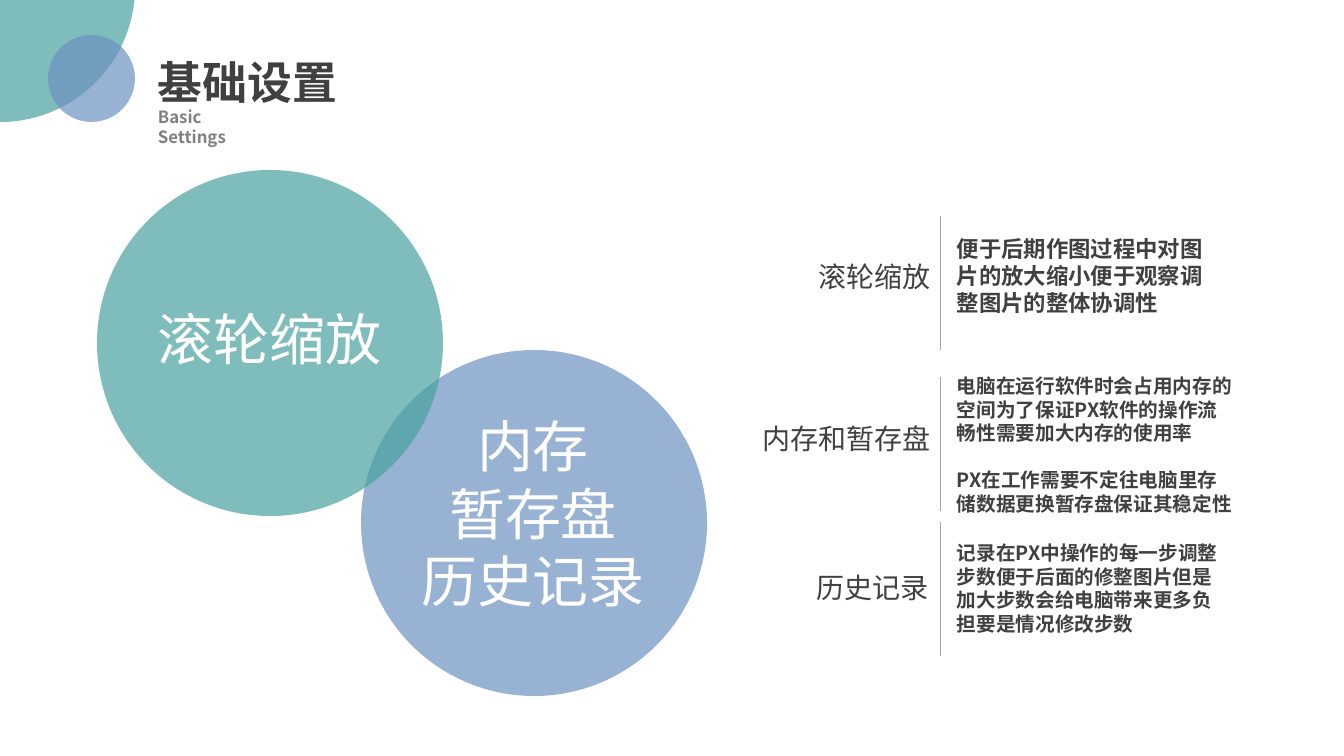
from lxml import etree
from pptx import Presentation
from pptx.dml.color import RGBColor as RGB
from pptx.enum.shapes import MSO_CONNECTOR as CONN, MSO_SHAPE as SHAPE
from pptx.enum.text import PP_ALIGN as AL
from pptx.oxml.ns import qn
from pptx.util import Pt

FONT = "Noto Sans CJK SC"
TEAL = RGB(0x48, 0xA2, 0xA0)
BLUE = RGB(0x6C, 0x92, 0xC0)
WHITE = RGB(0xFF, 0xFF, 0xFF)
DARK = RGB(0x40, 0x40, 0x40)
GREY = RGB(0x80, 0x80, 0x80)
RULE = RGB(0xA5, 0xA5, 0xA5)

MAIN_CIRCLES = [(361, 350, 346, BLUE), (97, 170, 346, TEAL)]
CORNER_CIRCLES = [(-135, -148, 270, TEAL), (48, 35, 87, BLUE)]

CIRCLE_TEXTS = [
    ((148, 300, 250, 78), ["滚轮缩放"], AL.LEFT),
    ((408, 407, 250, 281), ["内存", "暂存盘", "历史记录"], AL.CENTER),
]
SECTIONS = [
    ("滚轮缩放", (941, 255), 216, (230, 286, 92), 16,
     ["便于后期作图过程中对图片的放大缩小便于观察调整图片的整体协调性"]),
    ("内存和暂存盘", (941, 417), 377, (369, 300, 152), 14,
     ["电脑在运行软件时会占用内存的空间为了保证PX软件的操作流畅性需要加大内存的使用率",
      "PX在工作需要不定往电脑里存储数据更换暂存盘保证其稳定性"]),
    ("历史记录", (939, 566), 522, (536, 286, 105), 14,
     ["记录在PX中操作的每一步调整步数便于后面的修整图片但是加大步数会给电脑带来更多负担要是情况修改步数"]),
]
RULE_X, RULE_H, BODY_X = 940, 134, 947
LABEL_W, LABEL_H = 210, 44
LINE_RATIO = 1.2


def px(n):
    return round(n * 914400 / 100.8)


def add_circle(s, x, y, d, color):
    sp = s.shapes.add_shape(SHAPE.OVAL, px(x), px(y), px(d), px(d))
    sp.shadow.inherit = False
    sp.fill.solid()
    sp.fill.fore_color.rgb = color
    sp.line.fill.background()
    clr = sp.fill._xPr.find(qn("a:solidFill"))[0]
    etree.SubElement(clr, qn("a:alpha")).set("val", "70000")


def add_text(s, box, lines, size, color, bold=False, align=AL.LEFT, gap=0):
    tf = s.shapes.add_textbox(*map(px, box)).text_frame
    tf.word_wrap = True
    for i, line in enumerate(lines):
        p = tf.paragraphs[0] if i == 0 else tf.add_paragraph()
        p.alignment = align
        p.line_spacing = Pt(size * LINE_RATIO)
        if i and gap:
            p.space_before = Pt(gap)
        r = p.add_run()
        r.text = line
        for name, value in {"name": FONT, "size": Pt(size), "bold": bold}.items():
            setattr(r.font, name, value)
        r.font.color.rgb = color
        etree.SubElement(r.font._element, qn("a:ea")).set("typeface", FONT)


def add_rule(s, y):
    ln = s.shapes.add_connector(CONN.STRAIGHT, px(RULE_X), px(y), px(RULE_X), px(y + RULE_H))
    ln.line.color.rgb = RULE
    ln.line.width = Pt(0.5)
    etree.SubElement(ln._element.spPr, qn("a:effectLst"))


def main():
    prs = Presentation()
    prs.slide_width, prs.slide_height = px(1344), px(756)
    s = prs.slides.add_slide(prs.slide_layouts[6])

    for circle in MAIN_CIRCLES:
        add_circle(s, *circle)
    for box, lines, align in CIRCLE_TEXTS:
        add_text(s, box, lines, 40, WHITE, align=align)

    for label, (right, top), rule_y, (y, w, h), size, body in SECTIONS:
        add_text(s, (right - LABEL_W, top, LABEL_W, LABEL_H), [label], 20, DARK, align=AL.RIGHT)
        add_rule(s, rule_y)
        add_text(s, (BODY_X, y, w, h), body, size, DARK, bold=True, gap=size * LINE_RATIO)

    for circle in CORNER_CIRCLES:
        add_circle(s, *circle)
    add_text(s, (148, 50, 210, 65), ["基础设置"], 32, DARK, bold=True)
    add_text(s, (148, 102, 126, 50), ["Basic Settings"], 12, GREY, bold=True)
    prs.save("out.pptx")


if __name__ == "__main__":
    main()
